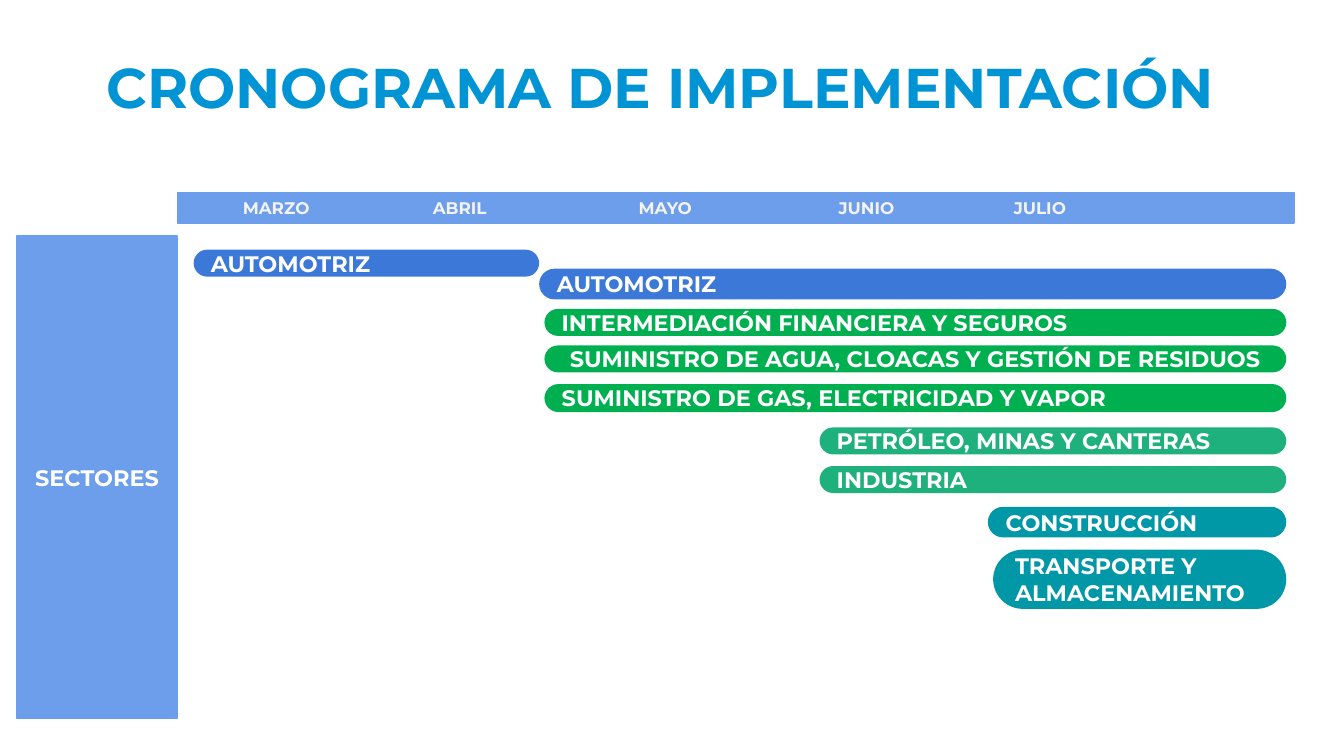
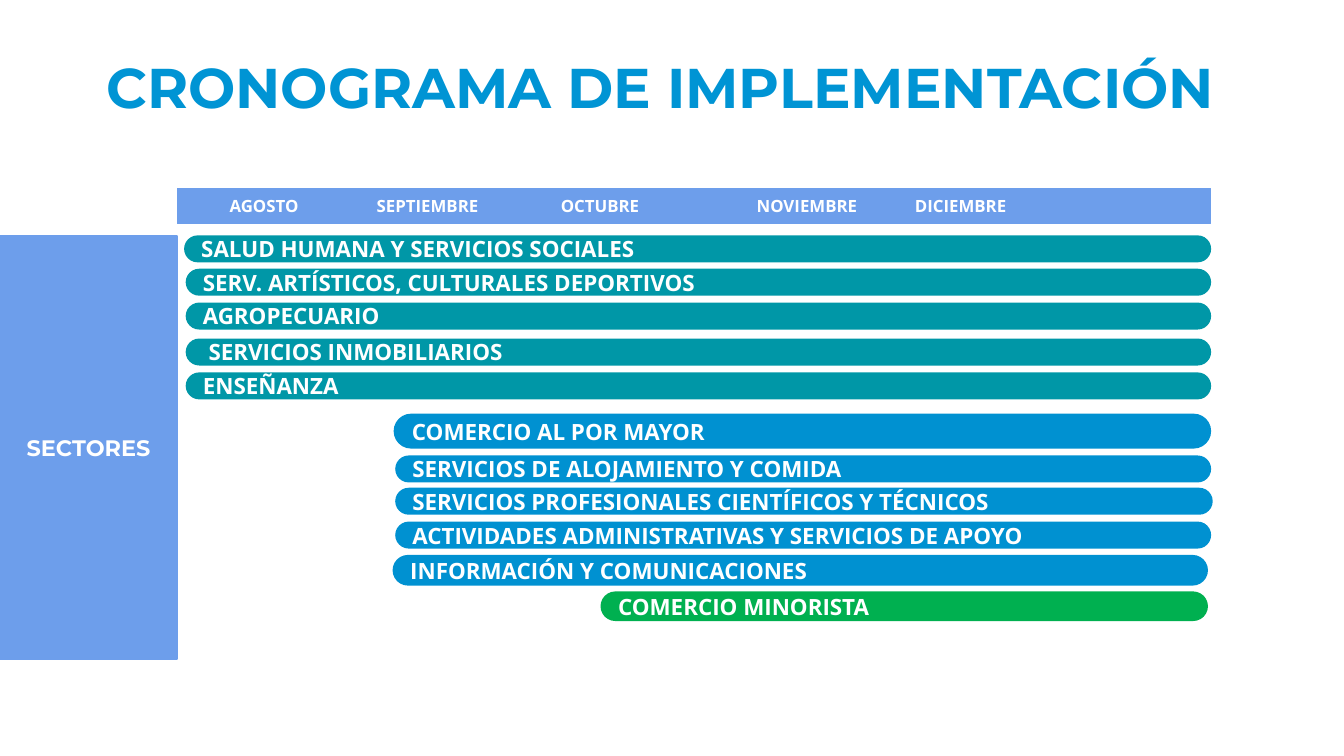
from collections import namedtuple

from lxml.etree import SubElement
from pptx import Presentation
from pptx.dml.color import RGBColor
from pptx.enum.shapes import MSO_SHAPE as Preset
from pptx.enum.text import MSO_ANCHOR as Anchor, PP_ALIGN as Align
from pptx.oxml.ns import qn
from pptx.util import Cm, Pt

Box = namedtuple("Box", "left top width height")
Bar = namedtuple("Bar", "label start top color height end align",
                 defaults=(0.51, None, Align.LEFT))

MONTSERRAT, OPEN_SANS = "Montserrat", "Open Sans"
WHITE, PALE, TITLE_BLUE, BAND = "FFFFFF", "F3F3F3", "0094D4", "6D9EEB"
ROYAL, GREEN, MINT, TEAL, SKY = "3C78D8", "00B050", "1FB17D", "0097A7", "0091D1"
TITLE_BOX = Box(1.88, 0.86, 22.76, 2.16)

SPRING_BARS = [
    Bar("AUTOMOTRIZ", 0.31, 0.27, ROYAL, end=6.84),
    Bar("AUTOMOTRIZ", 6.84, 0.63, ROYAL, 0.58),
    Bar("INTERMEDIACIÓN FINANCIERA Y SEGUROS", 6.94, 1.39, GREEN),
    Bar("SUMINISTRO DE AGUA, CLOACAS Y GESTIÓN DE RESIDUOS", 6.94, 2.08, GREEN,
        align=Align.CENTER),
    Bar("SUMINISTRO DE GAS, ELECTRICIDAD Y VAPOR", 6.94, 2.81, GREEN, 0.53),
    Bar("PETRÓLEO, MINAS Y CANTERAS", 12.14, 3.63, MINT),
    Bar("INDUSTRIA", 12.14, 4.36, MINT),
    Bar("CONSTRUCCIÓN", 15.32, 5.13, TEAL, 0.58),
    Bar("TRANSPORTE Y ALMACENAMIENTO", 15.42, 5.94, TEAL, 1.12),
]
AUTUMN_BARS = [
    Bar("SALUD HUMANA Y SERVICIOS SOCIALES", 0.13, 0, TEAL),
    Bar("SERV. ARTÍSTICOS, CULTURALES DEPORTIVOS", 0.16, 0.63, TEAL),
    Bar("AGROPECUARIO", 0.16, 1.27, TEAL),
    Bar(" SERVICIOS INMOBILIARIOS", 0.16, 1.95, TEAL),
    Bar("ENSEÑANZA", 0.16, 2.59, TEAL),
    Bar("COMERCIO AL POR MAYOR", 4.09, 3.37, SKY, 0.66),
    Bar("SERVICIOS DE ALOJAMIENTO Y COMIDA", 4.12, 4.16, SKY),
    Bar("SERVICIOS PROFESIONALES CIENTÍFICOS Y TÉCNICOS", 4.12, 4.77, SKY, end=19.57),
    Bar("ACTIVIDADES ADMINISTRATIVAS Y SERVICIOS DE APOYO", 4.12, 5.41, SKY),
    Bar("INFORMACIÓN Y COMUNICACIONES", 4.07, 6.04, SKY, 0.58, 19.48),
    Bar("COMERCIO MINORISTA", 8, 6.73, GREEN, 0.56, 19.48),
]


def rgb(color):
    """Turn a hex string into a colour."""
    return RGBColor.from_string(color)


def set_text(shape, text, font, size, color, align=Align.LEFT, inset=0.25):
    """Write one bold run into the shape and return its paragraph."""
    frame = shape.text_frame
    frame.word_wrap = True
    frame.margin_left = frame.margin_right = Cm(inset)
    frame.margin_top = frame.margin_bottom = Cm(inset)
    paragraph = frame.paragraphs[0]
    paragraph.alignment = align
    run = paragraph.add_run()
    run.text = text
    run.font.name, run.font.size, run.font.bold = font, Pt(size), True
    run.font.color.rgb = rgb(color)
    return paragraph


def add_block(slide, preset, box, color, outlined=False):
    """Add a plain filled shape, with a thin line of its own colour if outlined."""
    shape = slide.shapes.add_shape(preset, *map(Cm, box))
    shape.shadow.inherit = False
    shape.fill.solid()
    shape.fill.fore_color.rgb = rgb(color)
    if outlined:
        shape.line.color.rgb = rgb(color)
        shape.line.width = Pt(0.75)
    else:
        shape.line.fill.background()
    shape.text_frame.vertical_anchor = Anchor.MIDDLE
    return shape


def add_title(slide, box):
    """Add the slide title."""
    shape = slide.shapes.add_textbox(*map(Cm, box))
    set_text(shape, "CRONOGRAMA DE IMPLEMENTACIÓN", MONTSERRAT, 30, TITLE_BLUE, inset=0.13)


def add_months(slide, box, months, font, color):
    """Add the month band, with each name at its own tab stop."""
    band = add_block(slide, Preset.RECTANGLE, box, BAND, outlined=True)
    text = "".join("\t" + name for name in months)
    paragraph = set_text(band, text, font, 9, color)
    properties = paragraph._p.get_or_add_pPr()
    stops = SubElement(properties, qn("a:tabLst"))
    for position in months.values():
        SubElement(stops, qn("a:tab"), pos=str(Cm(position)), algn="l")


def add_sectors(slide, box):
    """Add the sector panel at the left."""
    panel = add_block(slide, Preset.RECTANGLE, box, BAND, outlined=True)
    set_text(panel, "SECTORES", MONTSERRAT, 12, WHITE, Align.CENTER)


def add_bars(slide, box, bars, font):
    """Add the rounded bars, which reach the right of the box unless they end earlier."""
    for bar in bars:
        end = bar.end or box.width
        place = Box(box.left + bar.start, box.top + bar.top, end - bar.start, bar.height)
        shape = add_block(slide, Preset.ROUNDED_RECTANGLE, place, bar.color)
        shape.adjustments[0] = 0.5
        set_text(shape, bar.label, font, 12, WHITE, bar.align)


def add_schedule(presentation, months, month_box, month_color, sector_box, bars, bar_box, font):
    """Add one schedule slide."""
    slide = presentation.slides.add_slide(presentation.slide_layouts[6])
    add_title(slide, TITLE_BOX)
    add_months(slide, month_box, months, font, month_color)
    add_sectors(slide, sector_box)
    add_bars(slide, bar_box, bars, font)


def main():
    """Build and save the presentation."""
    presentation = Presentation()
    presentation.slide_width, presentation.slide_height = Cm(25.4), Cm(14.29)
    add_schedule(
        presentation,
        {"MARZO": 0.99, "ABRIL": 4.58, "MAYO": 8.47, "JUNIO": 12.25, "JULIO": 15.56},
        Box(3.35, 3.64, 21.11, 0.58), PALE, Box(0.32, 4.46, 3.03, 9.12),
        SPRING_BARS, Box(3.35, 4.45, 20.96, 9.12), MONTSERRAT)
    add_schedule(
        presentation,
        {"AGOSTO": 0.74, "SEPTIEMBRE": 3.52, "OCTUBRE": 7, "NOVIEMBRE": 10.7,
         "DICIEMBRE": 13.69},
        Box(3.35, 3.56, 19.53, 0.67), WHITE, Box(0, 4.46, 3.35, 8),
        AUTUMN_BARS, Box(3.35, 4.45, 19.54, 8), OPEN_SANS)
    presentation.save("out.pptx")


if __name__ == "__main__":
    main()
